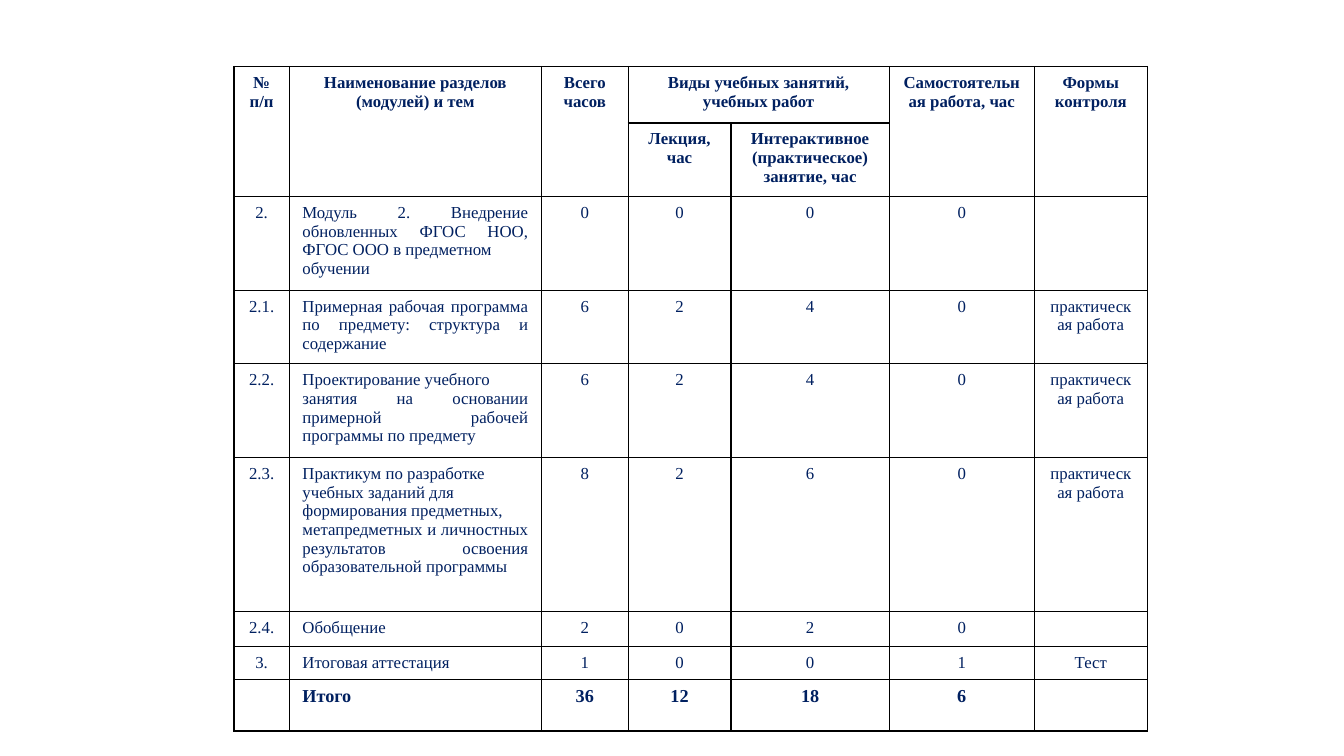
"""Build a slide with the curriculum plan table for module 2."""
import pptx
import pptx.dml.color
import pptx.enum.text
import pptx.oxml.ns
import pptx.util
from lxml import etree

Inches = pptx.util.Inches
Pt = pptx.util.Pt
ALIGN = pptx.enum.text.PP_ALIGN
NAVY = pptx.dml.color.RGBColor(0x00, 0x20, 0x60)
BLACK = pptx.dml.color.RGBColor(0x00, 0x00, 0x00)
FONT = "Times New Roman"

PRACTICE = "практическая работа"
ROWS = [
    ("№ п/п", "Наименование разделов (модулей) и тем", "Всего часов",
     "Виды учебных занятий, учебных работ", "", "Самостоятельная работа, час", "Формы контроля"),
    ("", "", "", "Лекция, час", "Интерактивное (практическое) занятие, час", "", ""),
    ("2.", "Модуль 2. Внедрение обновленных ФГОС НОО, ФГОС ООО в предметном\nобучении",
     "0", "0", "0", "0", ""),
    ("2.1.", "Примерная рабочая программа по предмету: структура и содержание",
     "6", "2", "4", "0", PRACTICE),
    ("2.2.", "Проектирование учебного\nзанятия на основании примерной рабочей программы по предмету",
     "6", "2", "4", "0", PRACTICE),
    ("2.3.", "Практикум по разработке\nучебных заданий для\nформирования предметных,\n"
     "метапредметных и личностных результатов освоения образовательной программы",
     "8", "2", "6", "0", PRACTICE),
    ("2.4.", "Обобщение", "2", "0", "2", "0", ""),
    ("3.", "Итоговая аттестация", "1", "0", "0", "1", "Тест"),
    ("", "Итого", "36", "12", "18", "6", ""),
]
COLUMN_WIDTHS = [0.55, 2.5, 0.86, 1.02, 1.57, 1.44, 1.12]
ROW_HEIGHTS = [0.56, 0.73, 0.93, 0.73, 0.93, 1.53, 0.33, 0.33, 0.51]
LEFT, TOP = 2.32, 0.66
HEADER_ROWS = 2
TOTAL_ROW = len(ROWS) - 1
TITLE_COLUMN = 1
TALL_HEADERS = [0, 1, 2, 5, 6]


def add_borders(cell):
    properties = cell._tc.get_or_add_tcPr()
    for side in ("a:lnL", "a:lnR", "a:lnT", "a:lnB"):
        line = etree.SubElement(properties, pptx.oxml.ns.qn(side), w=str(Pt(1)))
        fill = etree.SubElement(line, pptx.oxml.ns.qn("a:solidFill"))
        etree.SubElement(fill, pptx.oxml.ns.qn("a:srgbClr"), val=str(BLACK))


def fill_cell(cell, text, size, bold, alignment):
    cell.margin_left = cell.margin_right = Inches(0.13)
    cell.margin_top = cell.margin_bottom = Inches(0.07)
    add_borders(cell)
    cell.fill.background()
    cell.text_frame.text = text
    for paragraph in cell.text_frame.paragraphs:
        paragraph.alignment = alignment
        for run in paragraph.runs:
            run.font.name = FONT
            run.font.size = Pt(size)
            run.font.bold = bold
            run.font.color.rgb = NAVY
        if not paragraph.runs:
            etree.SubElement(paragraph._p, pptx.oxml.ns.qn("a:endParaRPr"), sz=str(size * 100))


def alignment_for(row, column):
    if row < HEADER_ROWS or column != TITLE_COLUMN:
        return ALIGN.CENTER
    return ALIGN.LEFT if row == TOTAL_ROW else ALIGN.JUSTIFY


def main():
    presentation = pptx.Presentation()
    presentation.slide_width = Inches(13.33)
    presentation.slide_height = Inches(7.5)
    slide = presentation.slides.add_slide(presentation.slide_layouts[6])

    table = slide.shapes.add_table(
        len(ROWS), len(COLUMN_WIDTHS), Inches(LEFT), Inches(TOP),
        Inches(sum(COLUMN_WIDTHS)), Inches(sum(ROW_HEIGHTS))).table
    table.first_row = False
    table.horz_banding = False
    for column, width in zip(table.columns, COLUMN_WIDTHS):
        column.width = Inches(width)
    for row, height in zip(table.rows, ROW_HEIGHTS):
        row.height = Inches(height)

    for row, texts in enumerate(ROWS):
        size = 13 if row == TOTAL_ROW else 12
        bold = row < HEADER_ROWS or row == TOTAL_ROW
        for column, text in enumerate(texts):
            fill_cell(table.cell(row, column), text, size, bold, alignment_for(row, column))

    for column in TALL_HEADERS:
        table.cell(0, column).merge(table.cell(1, column))
    table.cell(0, 3).merge(table.cell(0, 4))
    presentation.save("out.pptx")


if __name__ == "__main__":
    main()
